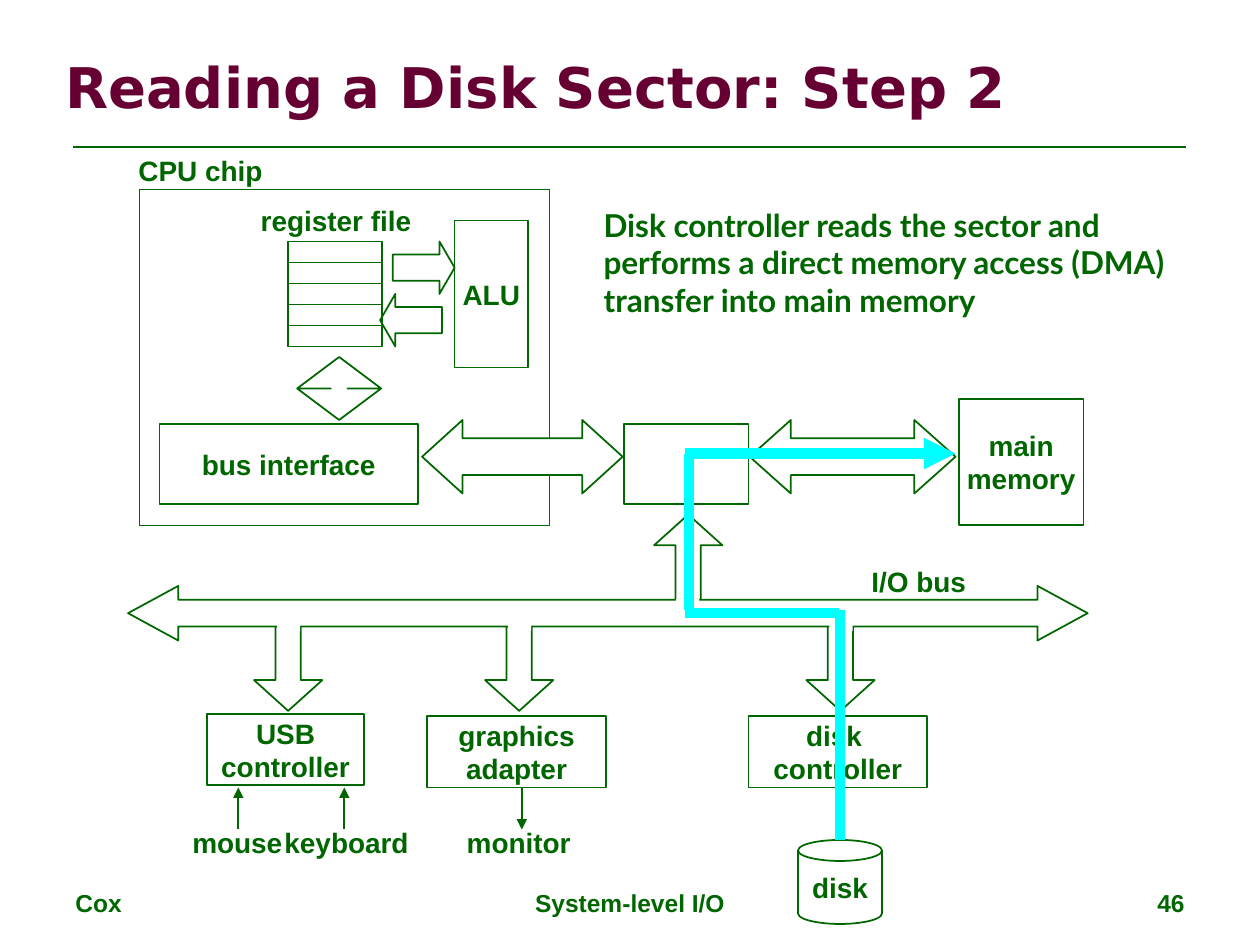
from lxml import etree
from pptx import Presentation
from pptx.dml.color import RGBColor
from pptx.enum.shapes import MSO_CONNECTOR, MSO_SHAPE
from pptx.enum.text import MSO_ANCHOR, PP_ALIGN
from pptx.oxml.ns import qn
from pptx.util import Inches, Pt

GREEN = RGBColor(0x00, 0x66, 0x00)
MAROON = RGBColor(0x66, 0x00, 0x33)
CYAN = RGBColor(0x00, 0xFF, 0xFF)
WHITE = RGBColor(0xFF, 0xFF, 0xFF)

RECT = MSO_SHAPE.RECTANGLE
CAN = MSO_SHAPE.CAN
UP, DOWN = MSO_SHAPE.UP_ARROW, MSO_SHAPE.DOWN_ARROW
LEFT, RIGHT = MSO_SHAPE.LEFT_ARROW, MSO_SHAPE.RIGHT_ARROW
TWO_WAY, UP_DOWN = MSO_SHAPE.LEFT_RIGHT_ARROW, MSO_SHAPE.UP_DOWN_ARROW
STRAIGHT = MSO_CONNECTOR.STRAIGHT
START, CENTER, END = PP_ALIGN.LEFT, PP_ALIGN.CENTER, PP_ALIGN.RIGHT
TOP, MIDDLE = MSO_ANCHOR.TOP, MSO_ANCHOR.MIDDLE

COLUMNS, ROWS = 120, 90
LABEL_HEIGHT = 4.4
SIDE_ADJUST = (0.5, 0.29)
STEM_ADJUST = (0.37, 0.45)


def cells(*lengths):
    return [Inches(length / 12) for length in lengths]


def write(box, lines, size=16, font="Arial", color=GREEN, align=CENTER,
          anchor=MIDDLE, wrap=False):
    frame = box.text_frame
    frame.word_wrap = wrap
    frame.vertical_anchor = anchor
    for index, line in enumerate(lines):
        para = frame.add_paragraph() if index else frame.paragraphs[0]
        para.alignment = align
        span = para.add_run()
        span.text = line
        span.font.size = Pt(size)
        span.font.name = font
        span.font.bold = True
        span.font.color.rgb = color


def add_title(page, text):
    title = page.shapes.title
    title.left, title.top, title.width, title.height = cells(5, 4.4, 104, 7.6)
    write(title, [text], 32, "DejaVu Sans", MAROON, START, wrap=True)


def add_text(page, text, area, **style):
    box = page.shapes.add_textbox(*cells(*area))
    write(box, [text], **style)


def add_label(page, text, center, top, width):
    add_text(page, text, (center - width / 2, top, width, LABEL_HEIGHT))


def add_block(page, kind, area, lines=(), adjust=(), fill=None, outline=1):
    block = page.shapes.add_shape(kind, *cells(*area))
    block.shadow.inherit = False
    for index, value in enumerate(adjust):
        block.adjustments[index] = value
    if fill is None:
        block.fill.background()
    else:
        block.fill.solid()
        block.fill.fore_color.rgb = fill
    if outline:
        block.line.color.rgb = GREEN
        block.line.width = Pt(outline)
    else:
        block.line.fill.background()
    write(block, lines)


def add_line(page, ends, color=GREEN, width=1, arrow=False):
    line = page.shapes.add_connector(STRAIGHT, *cells(*ends))
    line.line.color.rgb = color
    line.line.width = Pt(width)
    if arrow:
        etree.SubElement(line.line._get_or_add_ln(), qn("a:tailEnd"), type="triangle")
    etree.SubElement(line._element.spPr, qn("a:effectLst"))


def add_footer(page):
    add_line(page, (7, 14, 113, 14), width=1.5)
    for text, left, width, align in (
        ("Cox", 6, 28, START),
        ("System-level I/O", 41, 38, CENTER),
        ("46", 86, 28, END),
    ):
        add_text(page, text, (left, 84, width, 4.2), size=14, align=align,
                 anchor=TOP, wrap=True)


def add_processor(page):
    add_block(page, RECT, (13.3, 18, 39, 32), outline=0.25)
    add_label(page, "CPU chip", 19.1, 14, 14.3)
    add_label(page, "register file", 32, 18.8, 16.8)
    for register in range(5):
        add_block(page, RECT, (27.4, 23 + 2 * register, 9, 2))
    add_block(page, RIGHT, (37.4, 23, 5.9, 5), adjust=SIDE_ADJUST)
    add_block(page, LEFT, (36.2, 28, 5.9, 5), adjust=SIDE_ADJUST)
    add_block(page, RECT, (43.3, 21, 7, 14), ["ALU"])
    add_block(page, UP_DOWN, (28.3, 34, 8, 6), adjust=(0.5, 0.2))
    add_block(page, RECT, (15.2, 40.4, 24.6, 7.6), ["bus interface"])


def add_memory(page):
    add_block(page, RECT, (91.3, 38, 11.9, 12), ["main", "memory"])
    add_block(page, TWO_WAY, (71.4, 40, 19.6, 7), adjust=(0.5, 0.56))
    add_block(page, RECT, (59.4, 40.4, 11.9, 7.6))
    add_block(page, TWO_WAY, (40.2, 40, 19.1, 7), adjust=(0.5, 0.55), fill=WHITE)


def add_io_bus(page):
    add_block(page, UP, (62.3, 49, 6.5, 9), adjust=STEM_ADJUST)
    stems = (24.2, 46.2, 76.8)
    for left in stems:
        add_block(page, DOWN, (left, 58.7, 6.5, 9), adjust=STEM_ADJUST)
    add_block(page, TWO_WAY, (12.2, 55.8, 91.4, 5.2), adjust=(0.49, 0.92), fill=WHITE)
    for left in stems:
        add_block(page, RECT, (left + 2.2, 58, 2.2, 2.1), fill=WHITE, outline=0)
    add_block(page, RECT, (64.4, 57, 2.2, 2), fill=WHITE, outline=0)
    add_label(page, "I/O bus", 87.5, 53.2, 11.5)


def add_devices(page):
    for left, top, width, lines in (
        (19.7, 68, 15, ["USB", "controller"]),
        (40.7, 68.2, 17, ["graphics", "adapter"]),
        (71.3, 68.2, 17, ["disk ", "controller"]),
    ):
        add_block(page, RECT, (left, top, width, 6.8), lines)
    for text, center, width, x, start, end in (
        ("mouse", 22.6, 11, 22.7, 79, 75),
        ("keyboard", 33, 14.3, 32.8, 79, 75),
        ("monitor", 49.4, 12.4, 49.7, 75, 79),
    ):
        add_line(page, (x, start, x, end), arrow=True)
        add_label(page, text, center, 78, width)
    add_block(page, CAN, (76, 80, 8, 8), ["disk"], (0.25,))


def add_transfer(page):
    for ends, arrow in (
        ((65.2, 43.2, 91, 43.2), True),
        ((65.6, 43.2, 65.6, 58.1), False),
        ((65.2, 58.4, 79.9, 58.4), False),
        ((80, 58.1, 80, 80), False),
    ):
        add_line(page, ends, CYAN, 6, arrow)


def main():
    deck = Presentation()
    deck.slide_width, deck.slide_height = cells(COLUMNS, ROWS)
    page = deck.slides.add_slide(deck.slide_layouts[5])
    add_footer(page)
    add_title(page, "Reading a Disk Sector: Step 2")
    add_processor(page)
    add_memory(page)
    add_io_bus(page)
    add_devices(page)
    add_transfer(page)
    add_text(page, "Disk controller reads the sector and performs a direct memory "
             "access (DMA) transfer into main memory", (56.3, 19, 57.7, 12),
             size=18, font="Lato", align=START, anchor=TOP, wrap=True)
    deck.save("out.pptx")


if __name__ == "__main__":
    main()
